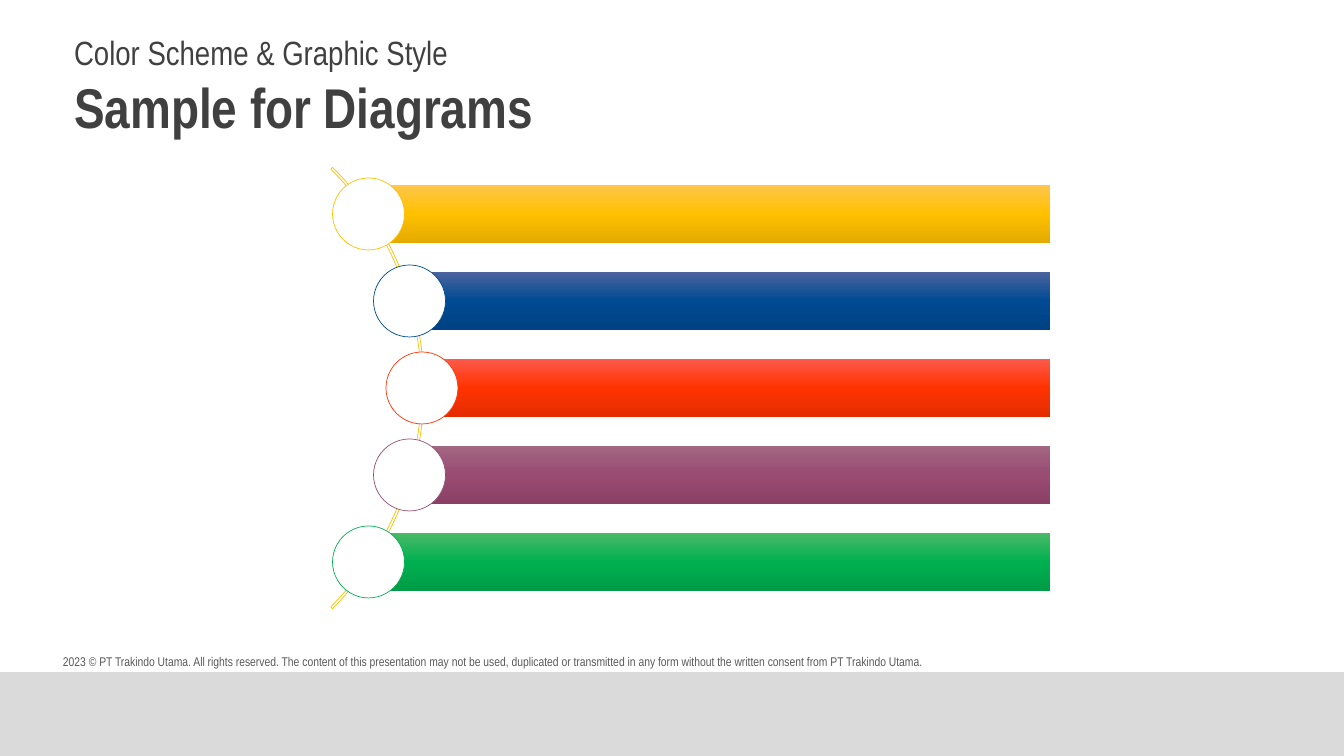
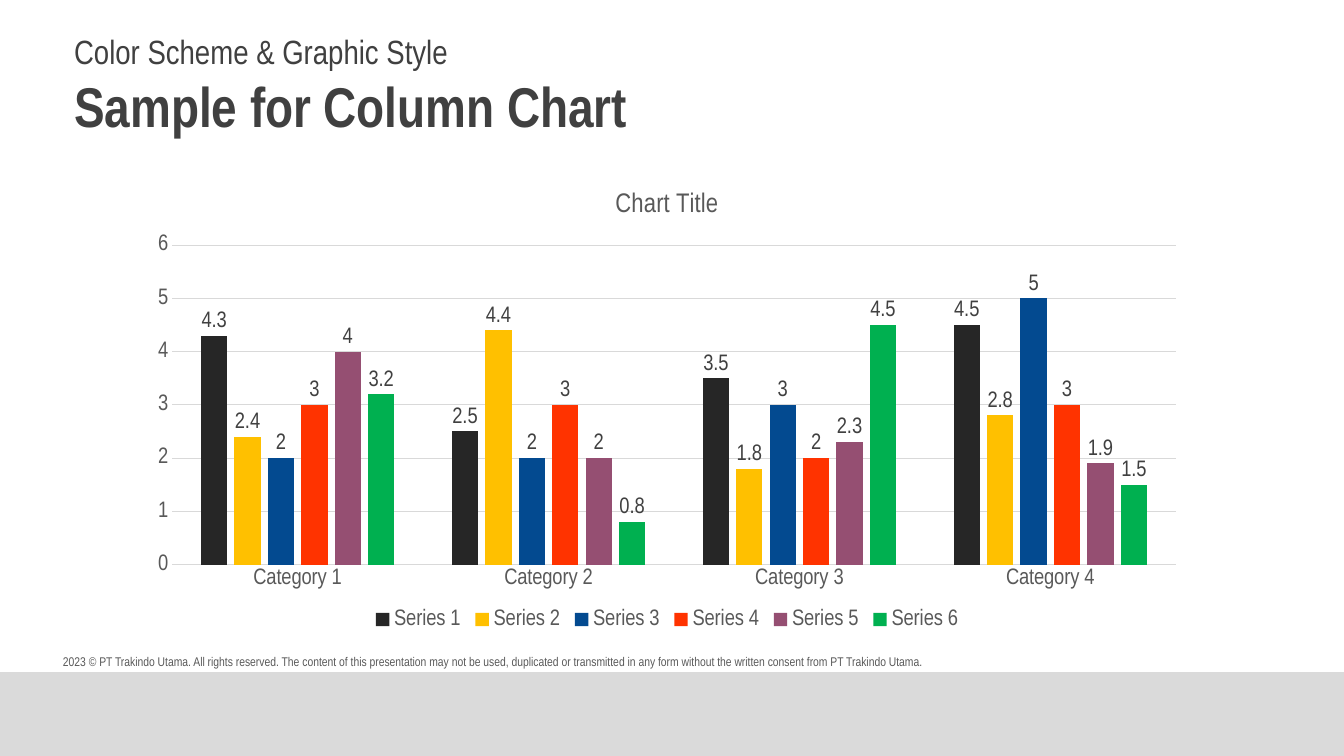
from copy import deepcopy
from dataclasses import dataclass
from math import sqrt

from pptx import Presentation
from pptx.chart.data import CategoryChartData
from pptx.dml.color import RGBColor
from pptx.enum.chart import XL_CHART_TYPE as ChartType
from pptx.enum.chart import XL_LABEL_POSITION as LabelPosition
from pptx.enum.chart import XL_LEGEND_POSITION as LegendPosition
from pptx.enum.chart import XL_TICK_MARK as TickMark
from pptx.enum.shapes import MSO_SHAPE as Preset
from pptx.enum.text import MSO_ANCHOR as Anchor
from pptx.enum.text import MSO_AUTO_SIZE as AutoSize
from pptx.enum.text import PP_ALIGN as Align
from pptx.oxml.ns import qn
from pptx.util import Emu, Pt


@dataclass(frozen=True)
class Theme:
    font: str = "Arial Narrow"
    white: str = "FFFFFF"
    band: str = "DADADA"
    dark: str = "404040"
    muted: str = "595959"
    grid: str = "D9D9D9"
    black: str = "262626"
    yellow: str = "FFC000"
    blue: str = "034A90"
    red: str = "FF3300"
    plum: str = "954F72"
    green: str = "00B050"
    kicker_size: float = 24
    title_size: float = 40
    chart_title_size: float = 19.2
    chart_size: float = 16
    copyright_size: float = 9
    hairline: float = 0.5
    grid_width: float = 0.75


THEME = Theme()
WIDTH, HEIGHT = 1344, 756
PANEL_HEIGHT = 672
KICKER = "Color Scheme & Graphic Style"
COPYRIGHT = (
    "2023 © PT Trakindo Utama. All rights reserved. The content of this presentation may not be used, "
    "duplicated or transmitted in any form without the written consent from PT Trakindo Utama."
)
ROWS = (
    (THEME.yellow, ("FFC64B", "FFC000", "E3AB00")),
    (THEME.blue, ("4B649E", "004A93", "004283")),
    (THEME.red, ("FF594B", "FF3300", "E32D00")),
    (THEME.plum, ("A26783", "994B72", "8B4065")),
    (THEME.green, ("4BB968", "00B050", "009C47")),
)
CATEGORIES = ("Category 1", "Category 2", "Category 3", "Category 4")
SERIES = (
    ("Series 1", THEME.black, (4.3, 2.5, 3.5, 4.5)),
    ("Series 2", THEME.yellow, (2.4, 4.4, 1.8, 2.8)),
    ("Series 3", THEME.blue, (2, 2, 3, 5)),
    ("Series 4", THEME.red, (3, 3, 2, 3)),
    ("Series 5", THEME.plum, (4, 2, 2.3, 1.9)),
    ("Series 6", THEME.green, (3.2, 0.8, 4.5, 1.5)),
)


def px(length):
    return Emu(round(length * 914400 / 100.8))


def box(left, top, width, height):
    return px(left), px(top), px(width), px(height)


def rgb(color):
    return RGBColor.from_string(color)


def style_font(font, size, color, bold=False):
    font.name = THEME.font
    font.size = Pt(size)
    font.bold = bold
    font.color.rgb = rgb(color)


def style_line(line, color, width):
    line.color.rgb = rgb(color)
    line.width = Pt(width)


def add_preset(slide, preset, frame, fill=None, line=None):
    shape = slide.shapes.add_shape(preset, *box(*frame))
    shape.shadow.inherit = False
    if fill:
        shape.fill.solid()
        shape.fill.fore_color.rgb = rgb(fill)
    else:
        shape.fill.background()
    if line:
        style_line(shape.line, line, THEME.hairline)
    else:
        shape.line.fill.background()
    return shape


def set_stops(fill, colors, positions):
    fill.gradient_angle = 270
    for stop, color, position in zip(fill.gradient_stops, colors, positions):
        stop.color.rgb = rgb(color)
        stop.position = position


def add_gradient_bar(slide, frame, colors):
    bar = add_preset(slide, Preset.RECTANGLE, frame)
    bar.fill.gradient()
    stops = bar.element.spPr.find(".//" + qn("a:gsLst"))
    stops.append(deepcopy(stops[-1]))
    set_stops(bar.fill, colors, (0, 0.5, 1))


def add_copyright(slide):
    text_box = slide.shapes.add_textbox(*box(53, 649, 889, 25))
    text_frame = text_box.text_frame
    text_frame.word_wrap = False
    text_frame.auto_size = AutoSize.SHAPE_TO_FIT_TEXT
    text_frame.text = COPYRIGHT
    style_font(text_frame.paragraphs[0].runs[0].font, THEME.copyright_size, THEME.muted)
    return text_box


def furnish_layout(layout, slide):
    fill = layout.background.fill
    fill.gradient()
    set_stops(fill, (THEME.white, THEME.band), (0, 0.88))
    panel = add_preset(slide, Preset.RECTANGLE, (0, 0, WIDTH, PANEL_HEIGHT), THEME.white)
    for offset, shape in enumerate((panel, add_copyright(slide))):
        shape.element.nvSpPr.cNvPr.id = 101 + offset
        layout.shapes.element.insert(2 + offset, shape.element)


def set_title(slide, heading, top):
    title = slide.shapes.title
    title.left, title.top, title.width, title.height = box(64, top, 1216, 131)
    text_frame = title.text_frame
    text_frame.vertical_anchor = Anchor.TOP
    text_frame.margin_top = px(7)
    text_frame.auto_size = AutoSize.NONE
    text_frame.text = f"{KICKER}\v{heading}"
    paragraph = text_frame.paragraphs[0]
    paragraph.alignment = Align.LEFT
    kicker, main_line = paragraph.runs
    style_font(kicker.font, THEME.kicker_size, THEME.dark)
    style_font(main_line.font, THEME.title_size, THEME.dark, bold=True)


def add_curved_list(slide):
    center_x, center_y, radius, rim = 112, 388, 310, 312
    pitch, bar_height, diameter, right = 87, 58, 72, 1050
    arc = add_preset(
        slide, Preset.BLOCK_ARC, (center_x - rim, center_y - rim, 2 * rim, 2 * rim), line=THEME.yellow
    )
    for index, value in enumerate((189, 27, 0.004)):
        arc.adjustments[index] = value
    for index, (outline, colors) in enumerate(ROWS):
        rise = (index - len(ROWS) // 2) * pitch
        x, y = center_x + sqrt(radius**2 - rise**2), center_y + rise
        add_gradient_bar(slide, (x, y - bar_height / 2, right - x, bar_height), colors)
        circle = (x - diameter / 2, y - diameter / 2, diameter, diameter)
        add_preset(slide, Preset.OVAL, circle, THEME.white, outline)


def style_axes(chart):
    for axis in (chart.category_axis, chart.value_axis):
        axis.major_tick_mark = axis.minor_tick_mark = TickMark.NONE
        style_font(axis.tick_labels.font, THEME.chart_size, THEME.muted)
    style_line(chart.category_axis.format.line, THEME.grid, THEME.grid_width)
    values = chart.value_axis
    values.minimum_scale, values.maximum_scale, values.major_unit = 0, 6, 1
    values.format.line.fill.background()
    style_line(values.major_gridlines.format.line, THEME.grid, THEME.grid_width)


def style_series(series, color):
    series.format.fill.solid()
    series.format.fill.fore_color.rgb = rgb(color)
    labels = series.data_labels
    labels.show_value = True
    labels.position = LabelPosition.OUTSIDE_END
    style_font(labels.font, THEME.chart_size, THEME.dark)


def add_column_chart(slide):
    data = CategoryChartData()
    data.categories = CATEGORIES
    for name, _, values in SERIES:
        data.add_series(name, values)
    chart = slide.shapes.add_chart(ChartType.COLUMN_CLUSTERED, *box(137, 170, 1060, 464), data).chart
    style_font(chart.font, THEME.chart_size, THEME.muted)
    chart.has_title = True
    title_frame = chart.chart_title.text_frame
    title_frame.text = "Chart Title"
    style_font(title_frame.paragraphs[0].runs[0].font, THEME.chart_title_size, THEME.muted)
    chart.chart_title.include_in_layout = False
    chart.has_legend = True
    chart.legend.position = LegendPosition.BOTTOM
    chart.legend.include_in_layout = False
    style_font(chart.legend.font, THEME.chart_size, THEME.muted)
    style_axes(chart)
    plot = chart.plots[0]
    plot.vary_by_categories = False
    plot.gap_width, plot.overlap = 219, -27
    for series, (_, color, _) in zip(plot.series, SERIES):
        style_series(series, color)


def main():
    presentation = Presentation()
    presentation.slide_width, presentation.slide_height = px(WIDTH), px(HEIGHT)
    layout = presentation.slide_layouts[5]
    list_slide = presentation.slides.add_slide(layout)
    furnish_layout(layout, list_slide)
    set_title(list_slide, "Sample for Diagrams", 25)
    add_curved_list(list_slide)
    chart_slide = presentation.slides.add_slide(layout)
    set_title(chart_slide, "Sample for Column Chart", 24)
    add_column_chart(chart_slide)
    presentation.save("out.pptx")


if __name__ == "__main__":
    main()
